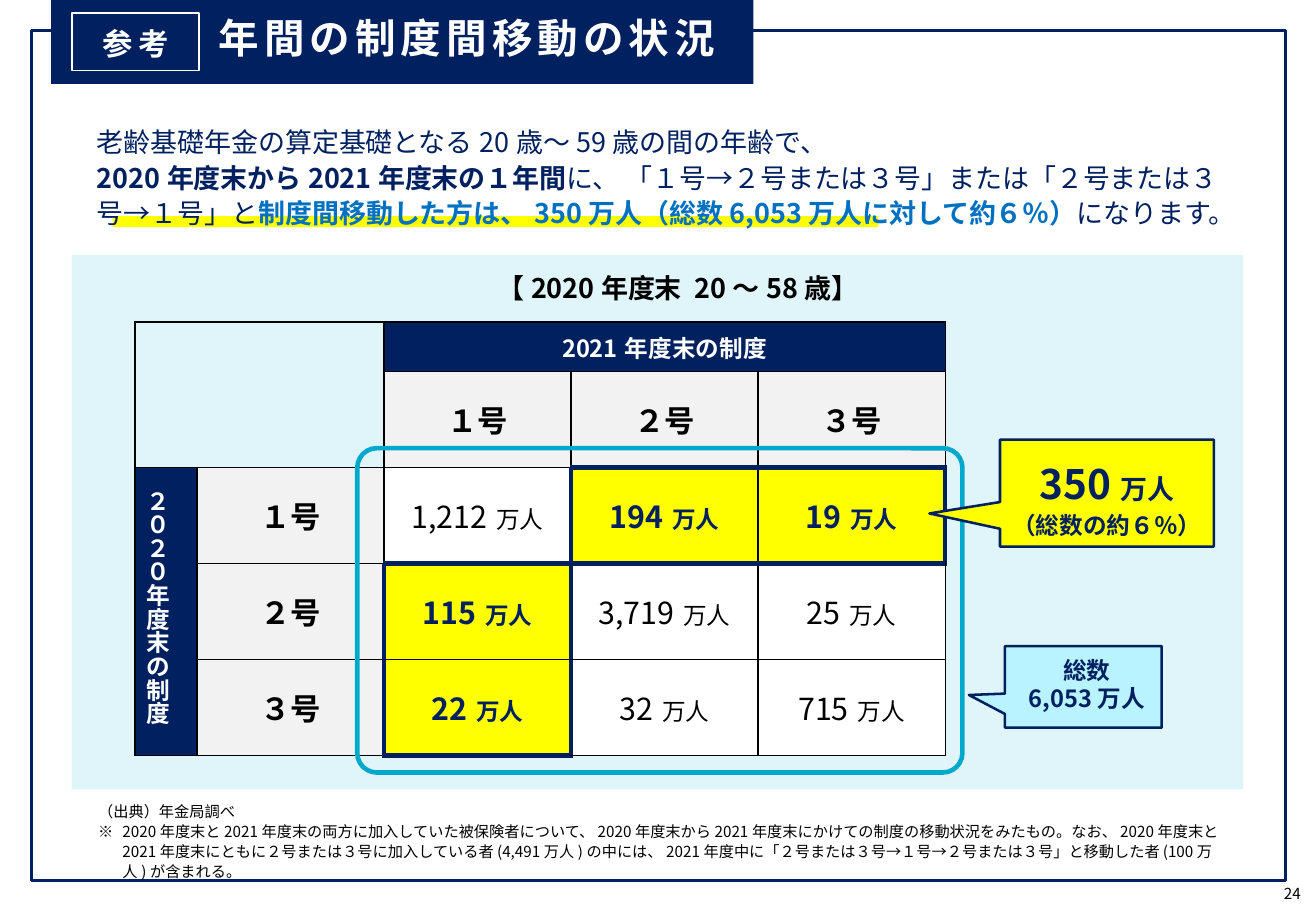
from dataclasses import dataclass

from lxml.etree import SubElement
from pptx import Presentation
from pptx.dml.color import RGBColor
from pptx.enum.shapes import MSO_SHAPE
from pptx.enum.text import MSO_ANCHOR, MSO_AUTO_SIZE, PP_ALIGN
from pptx.oxml.ns import qn
from pptx.util import Pt

PX = 9144
FONT = "Noto Sans CJK JP"
COLORS = {
    "navy": "002060", "blue": "0070C0", "teal": "00A9CC", "pale": "E0F5F9", "sky": "B9F3FF",
    "yellow": "FFFF00", "grey": "F2F2F2", "white": "FFFFFF", "black": "000000",
}
MOVED = {(2, 3): "out", (2, 4): "out", (3, 2): "in", (4, 2): "in"}
COUNTS = [["1,212", "194", "19"], ["115", "3,719", "25"], ["22", "32", "715"]]
CLASSES = ["１号", "２号", "３号"]
SIDES = {"lnL": (0, -1), "lnR": (0, 1), "lnT": (-1, 0), "lnB": (1, 0)}


@dataclass
class Box:
    left: int
    top: int
    width: int
    height: int

    def inner(self, left, top, width, height):
        return Box(self.left + left, self.top + top, width, height)

    def emu(self):
        return [value * PX for value in (self.left, self.top, self.width, self.height)]


def rgb(name):
    return RGBColor.from_string(COLORS[name])


def set_font(font, size, color, bold=False):
    font.name = FONT
    font.size = Pt(size)
    font.bold = bold
    font.color.rgb = rgb(color)


def write(para, runs, align=PP_ALIGN.LEFT, spacing=None):
    para.alignment = align
    if spacing:
        para.line_spacing = spacing
    base = runs[0][1:]
    set_font(para.font, *base)
    for text, *style in runs:
        for index, line in enumerate(text.split("\n")):
            if index:
                para.add_line_break()
            if line:
                span = para.add_run()
                span.text = line
                if tuple(style) != base:
                    set_font(span.font, *style)


def set_frame(frame, margins=(10, 5, 10, 5), anchor=MSO_ANCHOR.TOP, wrap=True):
    frame.word_wrap = wrap
    frame.auto_size = MSO_AUTO_SIZE.NONE
    frame.vertical_anchor = anchor
    frame.margin_left, frame.margin_top, frame.margin_right, frame.margin_bottom = [
        margin * PX for margin in margins]


def add_block(page, box, kind=MSO_SHAPE.RECTANGLE, fill=None, line=None, weight=1, adjust=()):
    shape = page.shapes.add_shape(kind, *box.emu())
    shape.shadow.inherit = False
    if fill:
        shape.fill.solid()
        shape.fill.fore_color.rgb = rgb(fill)
    else:
        shape.fill.background()
    if line:
        shape.line.color.rgb = rgb(line)
        shape.line.width = Pt(weight)
    else:
        shape.line.fill.background()
    for index, value in enumerate(adjust):
        shape.adjustments[index] = value
    return shape


def add_text(page, box, paragraphs, align=PP_ALIGN.LEFT, spacing=None, **frame_options):
    frame = page.shapes.add_textbox(*box.emu()).text_frame
    set_frame(frame, **frame_options)
    for index, runs in enumerate(paragraphs):
        para = frame.add_paragraph() if index else frame.paragraphs[0]
        write(para, runs, align, spacing)
    return frame


def add_banner(page, box):
    banner = add_block(page, box, fill="navy")
    title = page.shapes.title
    title.left, title.top, title.width, title.height = box.inner(128, 6, 482, 50).emu()
    banner.element.addnext(title.element)
    set_frame(title.text_frame)
    write(title.text_frame.paragraphs[0], [("年間の制度間移動の状況", 24, "white", True)])
    tag = add_block(page, box.inner(17, 11, 105, 47), line="white")
    set_frame(tag.text_frame, (8, 5, 8, 2), MSO_ANCHOR.MIDDLE)
    write(tag.text_frame.paragraphs[0], [("参考", 18, "white", True)], PP_ALIGN.CENTER)
    for shape in (title, tag):
        for font in shape.element.iter(qn("a:defRPr")):
            font.set("spc", "300")


def add_summary(page, box):
    add_block(page, box.inner(23, 82, 630, 9), fill="yellow")
    add_text(page, box, [[
        ("老齢基礎年金の算定基礎となる20歳～59歳の間の年齢で、\n", 16, "navy", False),
        ("2020年度末から2021年度末の１年間", 16, "navy", True),
        ("に、 「１号→２号または３号」または「２号または３号→１号」と", 16, "navy", False),
        ("制度間移動した方は、350万人（総数6,053万人に対して約６％）", 16, "blue", True),
        ("になります。", 16, "navy", False),
    ]], spacing=1.1)


def fill_cell(cell, runs=None, fill=None, spacing=None):
    cell.vertical_anchor = MSO_ANCHOR.MIDDLE
    if runs:
        write(cell.text_frame.paragraphs[0], runs, PP_ALIGN.CENTER, spacing)
    if fill:
        cell.fill.solid()
        cell.fill.fore_color.rgb = rgb(fill)
    else:
        cell.fill.background()


def set_borders(cell, row, column):
    properties = cell._tc.get_or_add_tcPr()
    for index, (side, (down, right)) in enumerate(SIDES.items()):
        edge = MOVED.get((row, column)) != MOVED.get((row + down, column + right))
        line = SubElement(properties, qn(f"a:{side}"), w=str(Pt(3 if edge else 1)))
        color = SubElement(SubElement(line, qn("a:solidFill")), qn("a:srgbClr"))
        color.set("val", COLORS["navy" if edge else "black"])
        properties.insert(index, line)


def add_movement_table(page, box):
    table = page.shapes.add_table(5, 5, *box.emu()).table
    table.first_row = table.horz_banding = False
    for index in range(5):
        table.columns[index].width = (154 if index else 51) * PX
        table.rows[index].height = (79 if index else 41) * PX
    for start, end in (((0, 0), (1, 1)), ((0, 2), (0, 4)), ((2, 0), (4, 0))):
        table.cell(*start).merge(table.cell(*end))
    fill_cell(table.cell(0, 0))
    fill_cell(table.cell(0, 2), [("2021年度末の制度", 14, "white", True)], "navy")
    before = table.cell(2, 0)
    fill_cell(before, [("２０２０年度末の制度", 14, "white", True)], "navy", Pt(14))
    before.margin_left, before.margin_right = 4 * PX, 16 * PX
    before._tc.get_or_add_tcPr().set("vert", "eaVert")
    for index, name in enumerate(CLASSES):
        for place in ((1, index + 2), (index + 2, 1)):
            fill_cell(table.cell(*place), [(name, 18, "black", True)], "grey")
    for row, counts in enumerate(COUNTS, 2):
        for column, count in enumerate(counts, 2):
            moved = (row, column) in MOVED
            style = ("navy" if moved else "black", moved)
            fill_cell(table.cell(row, column), [(count, 18, *style), ("万人", 14, *style)],
                      None if moved else "white")
    for row in range(5):
        for column in range(5):
            set_borders(table.cell(row, column), row, column)


def add_callout(page, box, fill, pointer, paragraphs, spacing=None, **frame_options):
    callout = add_block(page, box, MSO_SHAPE.RECTANGULAR_CALLOUT, fill, "navy", 1.5, pointer)
    frame = callout.text_frame
    set_frame(frame, **frame_options)
    for index, runs in enumerate(paragraphs):
        para = frame.add_paragraph() if index else frame.paragraphs[0]
        write(para, runs, PP_ALIGN.CENTER, spacing)


def add_panel(page, box):
    add_block(page, box, fill="pale")
    add_block(page, box.inner(412, 174, 308, 79), fill="yellow")
    add_block(page, box.inner(258, 254, 153, 159), fill="yellow")
    add_text(page, box.inner(322, 9, 354, 37),
             [[("【2020年度末 20～58歳】", 16, "black", True)]], PP_ALIGN.CENTER)
    add_movement_table(page, box.inner(52, 55, 667, 357))
    add_block(page, box.inner(235, 159, 498, 267), MSO_SHAPE.ROUNDED_RECTANGLE,
              line="teal", weight=2.75, adjust=[0.06])
    add_callout(page, box.inner(764, 152, 176, 88), "yellow", (-0.83, 0.19), [
        [("350", 24, "navy", True), ("万人", 16, "navy", True)],
        [("（総数の約６％）", 14, "navy", True)],
    ], 1.1, margins=(4, 12, 4, 5))
    add_callout(page, box.inner(768, 322, 129, 67), "sky", (-0.73, 0.1),
                [[("総数\n6,053万人", 14, "navy", True)]],
                margins=(13, 2, 7, 7), anchor=MSO_ANCHOR.MIDDLE)


def add_notes(page, box):
    frame = add_text(page, box, [
        [("（出典）年金局調べ", 9, "black")],
        [("※\t2020年度末と2021年度末の両方に加入していた被保険者について、2020年度末から"
          "2021年度末にかけての制度の移動状況をみたもの。なお、2020年度末と2021年度末にともに"
          "２号または３号に加入している者(4,491万人)の中には、2021年度中に"
          "「２号または３号→１号→２号または３号」と移動した者(100万人)が含まれる。", 9, "black")],
    ], spacing=1.1)
    for para in frame.paragraphs:
        properties = para._p.get_or_add_pPr()
        properties.set("marL", str(20 * PX))
        properties.set("indent", str(-20 * PX))


def build_slide(deck):
    page = deck.slides.add_slide(deck.slide_layouts[5])
    add_block(page, Box(26, 25, 1032, 700), line="navy", weight=2)
    add_banner(page, Box(42, 0, 578, 69))
    add_summary(page, Box(70, 96, 960, 96))
    add_panel(page, Box(59, 210, 964, 440))
    add_notes(page, Box(71, 654, 953, 58))
    add_text(page, Box(1045, 724, 37, 23), [[("24", 9, "black")]], PP_ALIGN.CENTER,
             margins=(8, 4, 8, 4), anchor=MSO_ANCHOR.MIDDLE, wrap=False)
    for latin in list(page.element.iter(qn("a:latin"))):
        latin.addnext(SubElement(latin.getparent(), qn("a:ea"), typeface=FONT))


def main():
    deck = Presentation()
    deck.slide_width, deck.slide_height = 1083 * PX, 750 * PX
    build_slide(deck)
    deck.save("out.pptx")


if __name__ == "__main__":
    main()
